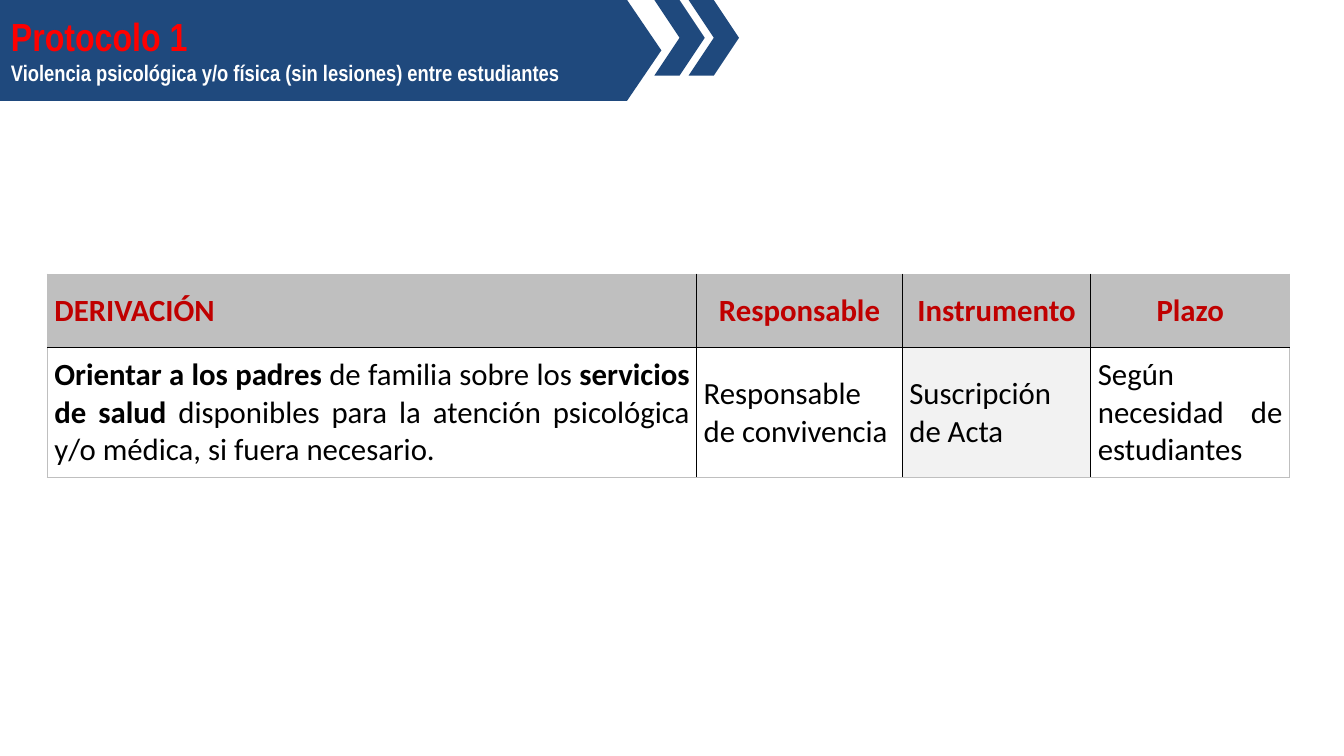
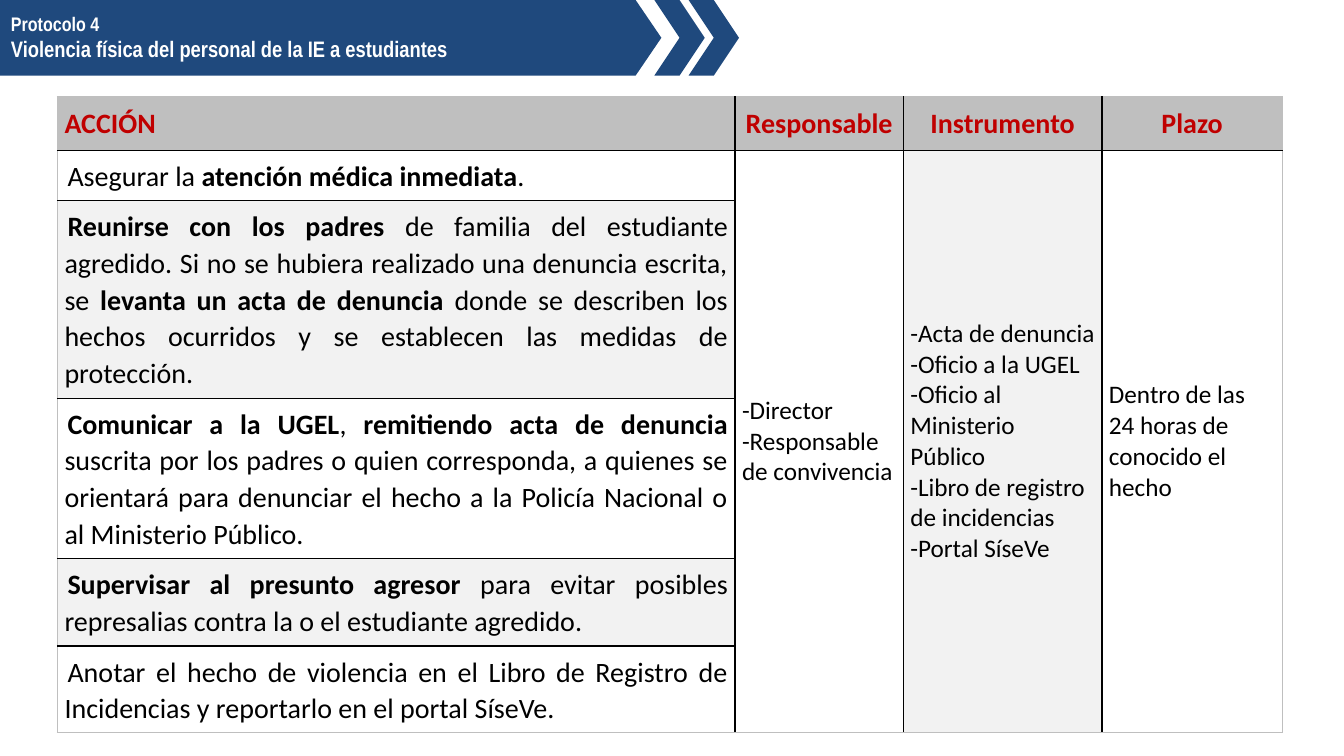
from lxml import etree
from pptx import Presentation
from pptx import util as u
from pptx.dml.color import RGBColor
from pptx.enum import shapes, text
from pptx.oxml.ns import qn

COLORS = {
    "navy": "1F497D", "red": "FF0000", "white": "FFFFFF", "black": "000000",
    "heading": "C00000", "header": "BFBFBF", "shade": "F2F2F2",
}
PLAIN_TABLE = "{2D5ABB26-0587-4C30-8999-92F81FD0307C}"
LEFT, CENTER, JUSTIFY = text.PP_ALIGN.LEFT, text.PP_ALIGN.CENTER, text.PP_ALIGN.JUSTIFY

PAGES = [
    {
        "title": ("Protocolo 1", 28, "red"),
        "subtitle": "Violencia psicológica y/o física (sin lesiones) entre estudiantes",
        "band": 1, "text_height": 0.84,
        "origin": (0.47, 2.72), "columns": [6.44, 2.04, 1.87, 1.97], "rows": [0.73, 1.29],
        "headings": ["DERIVACIÓN", "Responsable", "Instrumento", "Plazo"], "heading_size": 22,
        "actions": [
            "**Orientar a los padres **de familia sobre los **servicios de salud **"
            "disponibles para la atención psicológica y/o médica, si fuera necesario.",
        ],
        "action_format": {"margin": 0, "spacing": 1, "indent": 0, "anchor": text.MSO_ANCHOR.MIDDLE},
        "details": [
            (["Responsable de convivencia"], JUSTIFY),
            (["Suscripción de Acta"], JUSTIFY),
            (["Según necesidad de estudiantes"], JUSTIFY),
        ],
        "detail_size": 22,
    },
    {
        "title": ("Protocolo 4", 14, "white"),
        "subtitle": "Violencia física del personal de la IE a estudiantes",
        "band": 0.75, "text_height": 0.61,
        "origin": (0.57, 0.96), "columns": [6.72, 1.67, 1.97, 1.79],
        "rows": [0.53, 0.5, 1.96, 1.59, 0.87, 0.86],
        "headings": ["ACCIÓN", "Responsable", "Instrumento", "Plazo"], "heading_size": 20,
        "actions": [
            "Asegurar la **atención médica inmediata**.",
            "**Reunirse con los padres **de familia del estudiante agredido. Si no se hubiera "
            "realizado una denuncia escrita, se **levanta un acta de denuncia **donde se "
            "describen los hechos ocurridos y se establecen las medidas de protección.",
            "**Comunicar a la UGEL**, **remitiendo acta de denuncia **suscrita por los padres o "
            "quien corresponda, a quienes se orientará para denunciar el hecho a la Policía "
            "Nacional o al Ministerio Público.",
            "**Supervisar al presunto agresor **para evitar posibles represalias contra la o el "
            "estudiante agredido.",
            "Anotar el hecho de violencia en el Libro de Registro de Incidencias y reportarlo en "
            "el portal SíseVe.",
        ],
        "action_format": {"margin": 0.07, "spacing": 1.07, "indent": 0.03, "anchor": text.MSO_ANCHOR.TOP},
        "details": [
            (["-Director", "-Responsable de convivencia"], JUSTIFY),
            (["-Acta de denuncia", "-Oficio a la UGEL", "-Oficio al Ministerio Público",
              "-Libro de registro de incidencias", "-Portal SíseVe"], LEFT),
            (["Dentro de las 24 horas de conocido el hecho"], LEFT),
        ],
        "detail_size": 18,
    },
]


def write(frame, lines, align, font, size, color, bold=False):
    for index, line in enumerate(lines):
        para = frame.paragraphs[0] if index == 0 else frame.add_paragraph()
        para.alignment = align
        for part, words in enumerate(line.split("**")):
            if words:
                span = para.add_run()
                span.text = words
                style = {"name": font, "size": u.Pt(size), "bold": bold or part % 2 == 1}
                for name, value in style.items():
                    setattr(span.font, name, value)
                span.font.color.rgb = RGBColor.from_string(COLORS[color])


def border(cell, side, color):
    line = etree.SubElement(cell._tc.get_or_add_tcPr(), qn("a:" + side), w=str(u.Pt(1)))
    fill = etree.SubElement(line, qn("a:solidFill"))
    etree.SubElement(fill, qn("a:srgbClr"), val=COLORS[color])


deck = Presentation()
deck.slide_width, deck.slide_height = u.Inches(13.33), u.Inches(7.5)

for content in PAGES:
    page = deck.slides.add_slide(deck.slide_layouts[6])

    columns, rows = content["columns"], content["rows"]
    last_row, last_column = len(rows) - 1, len(columns) - 1
    bounds = [*content["origin"], sum(columns), sum(rows)]
    frame = page.shapes.add_table(len(rows), len(columns), *map(u.Inches, bounds))
    table = frame.table
    table.first_row = table.horz_banding = False
    table._tbl.tblPr.find(qn("a:tableStyleId")).text = PLAIN_TABLE
    for column, width in zip(table.columns, columns):
        column.width = u.Inches(width)
    for row, height in zip(table.rows, rows):
        row.height = u.Inches(height)
    if last_row > 1:
        for c in range(1, len(columns)):
            table.cell(1, c).merge(table.cell(last_row, c))

    for r in range(len(rows)):
        for c in range(len(columns)):
            cell = table.cell(r, c)
            border(cell, "lnL", "black" if c else "header")
            border(cell, "lnR", "black" if c < last_column else "header")
            if not cell.is_spanned:
                border(cell, "lnT", "black" if r else "header")
            bottom = last_row if cell.is_merge_origin else r
            if bottom == last_row or not cell.is_spanned:
                border(cell, "lnB", "black" if bottom < last_row else "header")

            shaded = c == 2 or (c == 0 and r % 2 == 0)
            cell.fill.solid()
            cell.fill.fore_color.rgb = RGBColor.from_string(
                COLORS["header" if r == 0 else "shade" if shaded else "white"])
            if cell.is_spanned:
                continue

            is_action = r > 0 and c == 0
            style = content["action_format"]
            margin = u.Inches(style["margin"] if is_action else 0)
            settings = {
                "margin_left": u.Inches(0.07), "margin_right": u.Inches(0.07),
                "margin_top": margin, "margin_bottom": margin,
                "vertical_anchor": style["anchor"] if is_action else text.MSO_ANCHOR.MIDDLE,
            }
            for name, value in settings.items():
                setattr(cell, name, value)

            if r == 0:
                write(cell.text_frame, [content["headings"][c]], CENTER if c else JUSTIFY,
                      "Calibri", content["heading_size"], "heading", True)
            elif is_action:
                write(cell.text_frame, [content["actions"][r - 1]], JUSTIFY,
                      "Calibri", content["heading_size"], "black")
                para = cell.text_frame.paragraphs[0]
                para.line_spacing = style["spacing"]
                para._p.get_or_add_pPr().set("indent", str(u.Inches(style["indent"])))
            else:
                lines, align = content["details"][c - 1]
                write(cell.text_frame, lines, align, "Calibri", content["detail_size"], "black")

    band_parts = [
        (shapes.MSO_SHAPE.CHEVRON, (6.49, 0, 0.5, 0.75), 0.5),
        (shapes.MSO_SHAPE.CHEVRON, (6.83, 0, 0.5, 0.75), 0.5),
        (shapes.MSO_SHAPE.PENTAGON, (0, 0, 6.56, content["band"]), 0.34),
    ]
    for kind, place, point in band_parts:
        shape = page.shapes.add_shape(kind, *map(u.Inches, place))
        shape.adjustments[0] = point
        shape.shadow.inherit = False
        shape.fill.solid()
        shape.fill.fore_color.rgb = RGBColor.from_string(COLORS["navy"])
        shape.line.fill.background()

    place = (0.01, 0.07, 6.22, content["text_height"])
    box = page.shapes.add_textbox(*map(u.Inches, place))
    box.text_frame.word_wrap = True
    title, size, color = content["title"]
    write(box.text_frame, [title, content["subtitle"]], LEFT, "Arial Narrow", 16, "white", True)
    heading = box.text_frame.paragraphs[0].runs[0].font
    heading.size = u.Pt(size)
    heading.color.rgb = RGBColor.from_string(COLORS[color])

deck.save("out.pptx")
